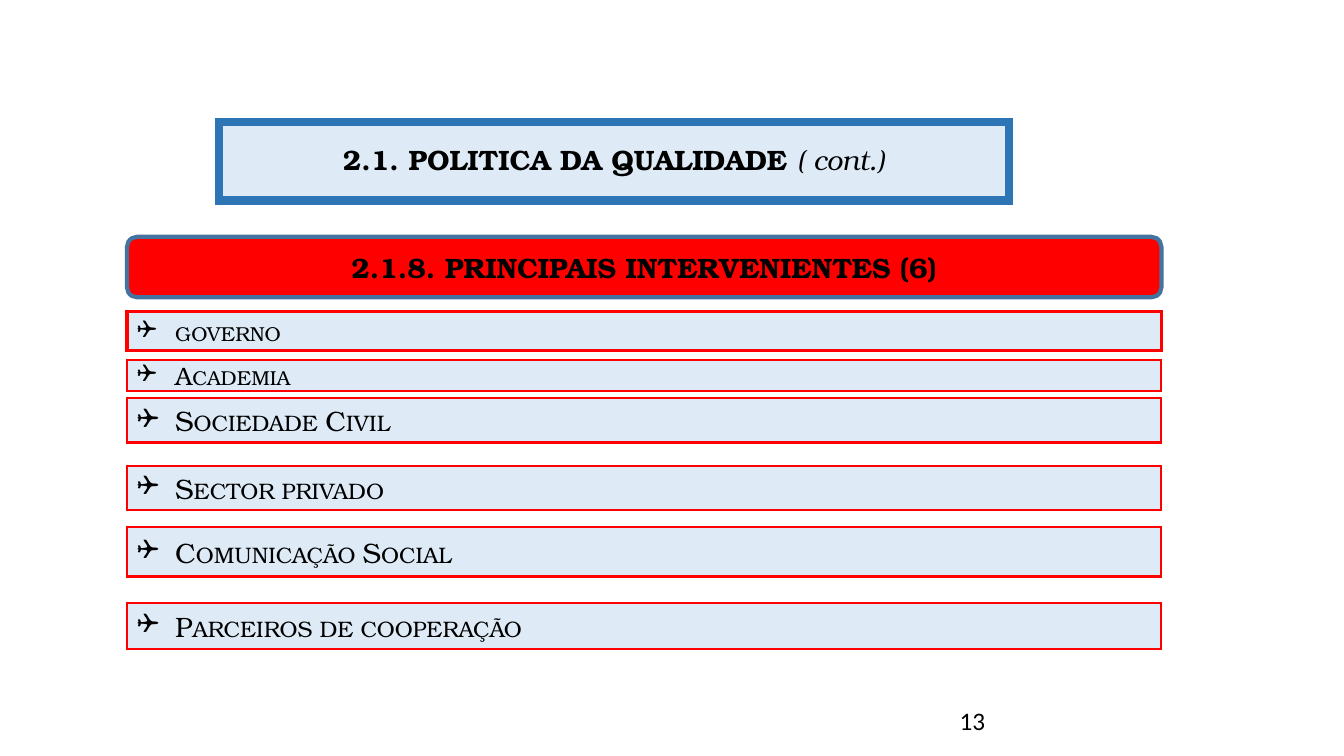
from pptx import Presentation
from pptx.dml.color import RGBColor
from pptx.enum.shapes import MSO_SHAPE
from pptx.enum.text import MSO_ANCHOR, MSO_AUTO_SIZE, PP_ALIGN
from pptx.oxml.ns import qn
from pptx.util import Inches, Pt
from lxml import etree

COLORS = {
    "text": "000000",
    "pale": "DEEBF7",
    "title_line": "2E75B6",
    "red": "FF0000",
    "heading_line": "43739E",
}
SERIF = "TeX Gyre Bonum"
LEFT, WIDTH = 1.26, 10.26

# Text, top, height, text size, line width
ACTORS = [
    ("governo", 3.09, 0.39, 18, 2.25),
    ("Academia", 3.57, 0.31, 18, 1.5),
    ("Sociedade Civil", 3.95, 0.44, 20, 1.5),
    ("Sector privado", 4.62, 0.44, 20, 1.5),
    ("Comunicação Social", 5.23, 0.49, 20, 1.5),
    ("Parceiros de cooperação", 5.98, 0.46, 20, 1.5),
]


def rgb(name):
    return RGBColor.from_string(COLORS[name])


def place(sp, box):
    sp.left, sp.top, sp.width, sp.height = [Inches(v) for v in box]


def paint(sp, fill, line, width):
    sp.fill.solid()
    sp.fill.fore_color.rgb = rgb(fill)
    sp.line.color.rgb = rgb(line)
    sp.line.width = Pt(width)
    # Sharp corners
    miter = etree.SubElement(sp.line._get_or_add_ln(), qn("a:miter"))
    miter.set("lim", "800000")


def style(r, size, font=SERIF, bold=False, italic=False):
    r.font.name = font
    r.font.size = Pt(size)
    r.font.bold = bold
    r.font.italic = italic
    r.font.color.rgb = rgb("text")


def add_bullet(p):
    pPr = p._p.get_or_add_pPr()
    pPr.set("marL", str(Inches(0.38)))
    pPr.set("indent", str(-Inches(0.38)))
    etree.SubElement(pPr, qn("a:buFont")).set("typeface", "Wingdings")
    etree.SubElement(pPr, qn("a:buChar")).set("char", "❑")


def add_bar(s, kind, box, text, fill, line, width):
    sp = s.shapes.add_shape(kind, *[Inches(v) for v in box])
    sp.shadow.inherit = False
    paint(sp, fill, line, width)
    tf = sp.text_frame
    tf.text = text
    tf.word_wrap = True
    tf.vertical_anchor = MSO_ANCHOR.MIDDLE
    return tf.paragraphs[0]


def add_title(s, box):
    sp = s.shapes.title
    place(sp, box)
    paint(sp, "pale", "title_line", 6)
    tf = sp.text_frame
    tf.auto_size = MSO_AUTO_SIZE.NONE
    tf.vertical_anchor = MSO_ANCHOR.MIDDLE
    p = tf.paragraphs[0]
    p.alignment = PP_ALIGN.CENTER
    p.line_spacing = 0.9
    for text, bold in [("2.1. POLITICA DA QUALIDADE ", True), ("( cont.)", False)]:
        r = p.add_run()
        r.text = text
        style(r, 20, bold=bold, italic=not bold)


def add_heading(s, box):
    p = add_bar(s, MSO_SHAPE.ROUNDED_RECTANGLE, box,
                "2.1.8. PRINCIPAIS INTERVENIENTES (6)", "red", "heading_line", 3)
    p.alignment = PP_ALIGN.CENTER
    style(p.runs[0], 20, bold=True)


def add_actor(s, box, text, size, width):
    p = add_bar(s, MSO_SHAPE.RECTANGLE, box, text, "pale", "red", width)
    p.alignment = PP_ALIGN.LEFT
    add_bullet(p)
    r = p.runs[0]
    style(r, size)
    r.font._element.set("cap", "small")


def add_page_number(s, box):
    tf = s.shapes.add_textbox(*[Inches(v) for v in box]).text_frame
    tf.word_wrap = True
    tf.text = "13"
    style(tf.paragraphs[0].runs[0], 18, font="Calibri")


def main():
    prs = Presentation()
    prs.slide_width, prs.slide_height = Inches(13.33), Inches(7.5)
    s = prs.slides.add_slide(prs.slide_layouts[5])

    # Title and section heading
    add_title(s, (2.17, 1.21, 7.84, 0.78))
    add_heading(s, (LEFT, 2.35, WIDTH, 0.6))

    # One bar for each actor
    for text, top, height, size, width in ACTORS:
        add_actor(s, (LEFT, top, WIDTH, height), text, size, width)

    add_page_number(s, (9.42, 6.95, 3, 0.4))
    prs.save("out.pptx")


if __name__ == "__main__":
    main()
